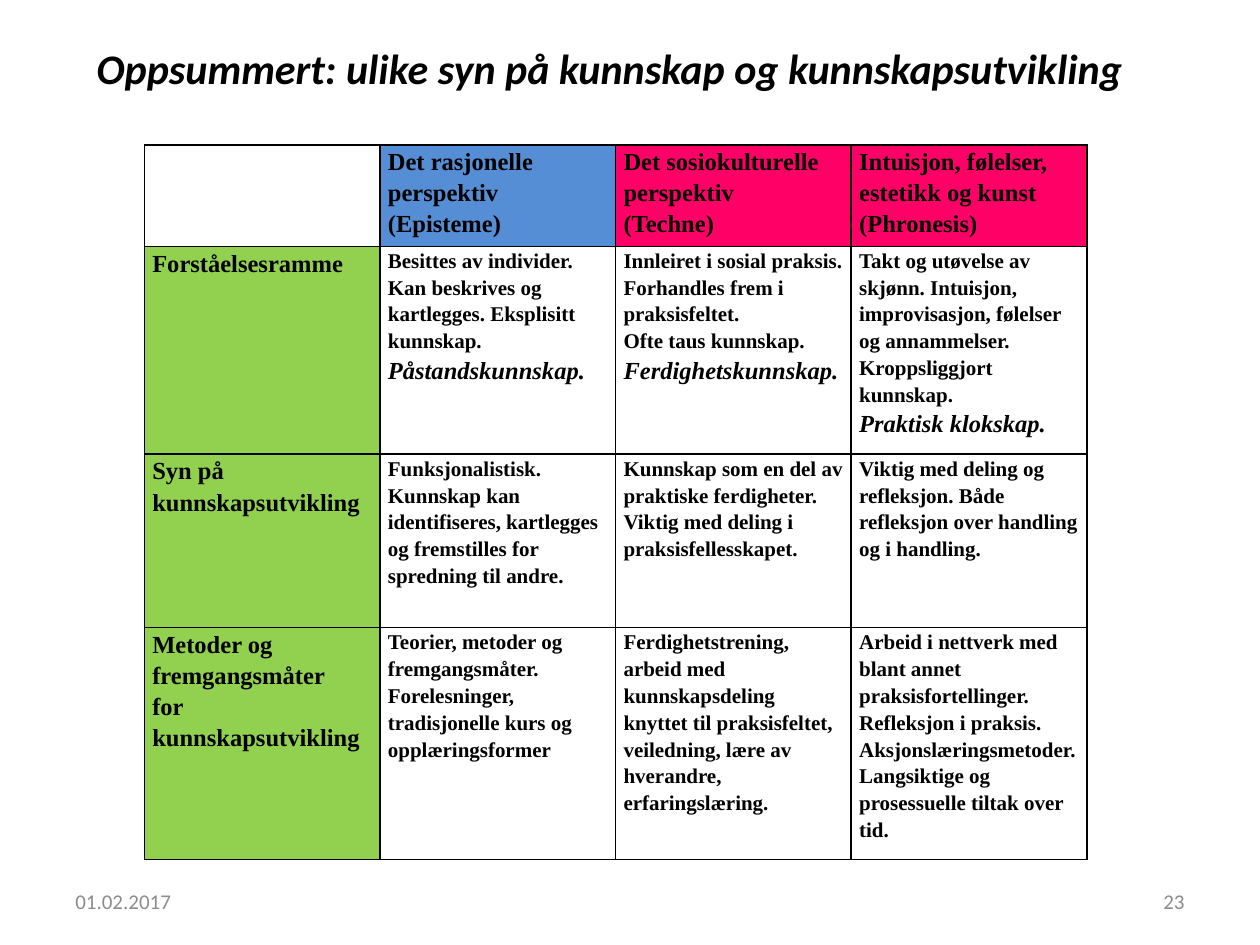
from lxml import etree
from pptx import Presentation, util as u
from pptx.dml.color import RGBColor
from pptx.enum import text as t
from pptx.oxml.ns import qn

HUE = {"ink": "000000", "grey": "8C8C8C", "blue": "558ED5",
       "pink": "FF0066", "green": "92D050"}
SANS, SERIF = "Calibri", "Times New Roman"

# Each cell is a list of paragraphs; "*" starts a large italic run
HEADS = [
    [],
    ["Det rasjonelle perspektiv", "(Episteme)"],
    ["Det sosiokulturelle perspektiv", "(Techne)"],
    ["Intuisjon, følelser, estetikk og kunst", "(Phronesis)"],
]
ROWS = [
    [["Forståelsesramme"],
     ["Besittes av individer. Kan beskrives og kartlegges. "
      "Eksplisitt kunnskap. *Påstandskunnskap."],
     ["Innleiret i sosial praksis. Forhandles frem i praksisfeltet.",
      "Ofte taus kunnskap.", "*Ferdighetskunnskap."],
     ["Takt og utøvelse av skjønn. Intuisjon, improvisasjon, "
      "følelser og annammelser.",
      "Kroppsliggjort kunnskap.", "*Praktisk klokskap."]],
    [["Syn på kunnskapsutvikling"],
     ["Funksjonalistisk. Kunnskap kan identifiseres, kartlegges og "
      "fremstilles for spredning til andre."],
     ["Kunnskap som en del av praktiske ferdigheter. "
      "Viktig med deling i praksisfellesskapet."],
     ["Viktig med deling og refleksjon. Både refleksjon over "
      "handling og i handling."]],
    [["Metoder og fremgangsmåter", "for kunnskapsutvikling"],
     ["Teorier, metoder og fremgangsmåter. Forelesninger, "
      "tradisjonelle kurs og opplæringsformer"],
     ["Ferdighetstrening, arbeid med kunnskapsdeling knyttet til "
      "praksisfeltet, veiledning, lære av hverandre, erfaringslæring."],
     ["Arbeid i nettverk med blant annet praksisfortellinger. "
      "Refleksjon i praksis.",
      "Aksjonslæringsmetoder. Langsiktige og prosessuelle tiltak over tid."]],
]
FILLS = [None, "blue", "pink", "pink"]
WIDTH = 4.75
HEIGHTS = [2.04, 4.19, 3.5, 4.67]


class Deck:
    def __init__(self):
        self.prs = Presentation()
        self.prs.slide_width, self.prs.slide_height = u.Cm(25.4), u.Cm(19.05)
        self.slide = self.prs.slides.add_slide(self.prs.slide_layouts[6])

    def run(self, para, words, size, face, hue="ink", bold=False, slant=False):
        run = para.add_run()
        run.text = words
        font = run.font
        font.size, font.name = u.Pt(size), face
        font.bold, font.italic = bold, slant
        font.color.rgb = RGBColor.from_string(HUE[hue])

    def label(self, box, words, size, wrap=True, side=t.PP_ALIGN.LEFT,
              anchor=t.MSO_ANCHOR.MIDDLE, **style):
        frame = self.slide.shapes.add_textbox(*map(u.Cm, box)).text_frame
        frame.word_wrap, frame.vertical_anchor = wrap, anchor
        para = frame.paragraphs[0]
        para.alignment = side
        self.run(para, words, size, SANS, **style)

    def edge(self, cell):
        props = cell._tc.get_or_add_tcPr()
        for side in "LRTB":
            line = etree.SubElement(props, qn(f"a:ln{side}"), w=str(u.Pt(1)))
            fill = etree.SubElement(line, qn("a:solidFill"))
            etree.SubElement(fill, qn("a:srgbClr"), val=HUE["ink"])

    def cell(self, cell, paras, size, hue):
        cell.margin_left = cell.margin_right = u.Cm(0.16)
        cell.margin_top = cell.margin_bottom = 0
        self.edge(cell)
        if hue:
            cell.fill.solid()
            cell.fill.fore_color.rgb = RGBColor.from_string(HUE[hue])
        else:
            cell.fill.background()
        frame = cell.text_frame
        for i, words in enumerate(paras):
            para = frame.add_paragraph() if i else frame.paragraphs[0]
            para.line_spacing = 1.15
            plain, _, key = words.partition("*")
            if plain:
                self.run(para, plain, size, SERIF, bold=True)
            if key:
                self.run(para, key, 14, SERIF, bold=True, slant=True)

    def table(self, left, top):
        grid = [HEADS] + ROWS
        wide = WIDTH * len(HEADS)
        table = self.slide.shapes.add_table(
            len(grid), len(HEADS), u.Cm(left), u.Cm(top),
            u.Cm(wide), u.Cm(sum(HEIGHTS))).table
        table.first_row = table.horz_banding = False
        for col in table.columns:
            col.width = u.Cm(WIDTH)
        for r, row in enumerate(grid):
            table.rows[r].height = u.Cm(HEIGHTS[r])
            for c, paras in enumerate(row):
                hue = FILLS[c] if r == 0 else None if c else "green"
                self.cell(table.cell(r, c), paras, 12 if r and c else 14, hue)


def main():
    deck = Deck()
    # Footer: date and page number
    deck.label((1.27, 17.66, 5.93, 1.01), "01.02.2017", 12, hue="grey")
    deck.label((18.2, 17.66, 5.93, 1.01), "23", 12, hue="grey",
               side=t.PP_ALIGN.RIGHT)
    # Comparison of the three perspectives
    deck.table(2.91, 2.92)
    # Title
    deck.label((1.7, 0.74, 21.26, 1.28),
               "Oppsummert: ulike syn på kunnskap og kunnskapsutvikling", 24,
               wrap=False, anchor=t.MSO_ANCHOR.TOP, bold=True, slant=True)
    deck.prs.save("out.pptx")


if __name__ == "__main__":
    main()
